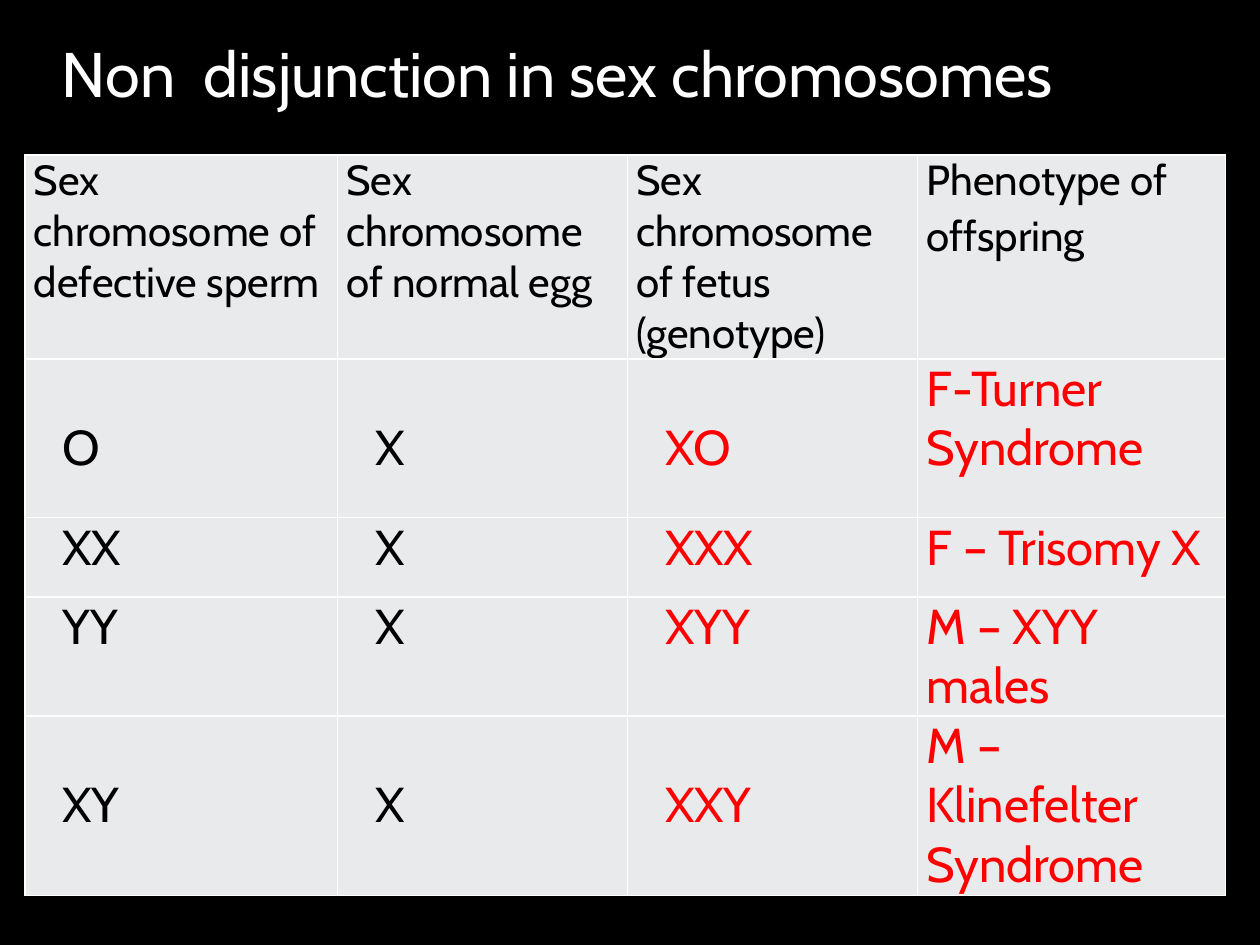
import pptx
import pptx.dml.color
import pptx.enum.text
import pptx.oxml.ns
import pptx.util
from lxml import etree

Cm = pptx.util.Cm
Pt = pptx.util.Pt
COLORS = {"back": "000000", "title": "FFFFFF", "text": "000000",
          "result": "FF0000", "cell": "E9EAEC", "line": "FFFFFF"}
FONT = "Cabin"
WIDTHS = [6.3, 5.85, 5.85, 6.2]
HEIGHTS = [4.11, 3.2, 1.6, 2.4, 3.61]
LINE = 1.2  # height of one line of body text

HEAD = ["Sex chromosome of\ndefective sperm", "Sex chromosome of normal egg",
        "Sex chromosome of fetus (genotype)", "Phenotype of\noffspring"]
# Sperm, egg, fetus, offspring, and lines the symbols are moved down
CASES = [
    (["O", "X", "XO", "F-Turner Syndrome"], 1),
    (["XX", "X", "XXX", "F – Trisomy X"], 0),
    (["YY", "X", "XYY", "M – XYY males"], 0),
    (["XY", "X", "XXY", "M – Klinefelter Syndrome"], 1),
]


def rgb(name):
    return pptx.dml.color.RGBColor.from_string(COLORS[name])


def style(frame, size, color):
    for par in frame.paragraphs:
        for run in par.runs:
            run.font.name = FONT
            run.font.size = Pt(size)
            run.font.color.rgb = rgb(color)


def border(cell):
    props = cell._tc.get_or_add_tcPr()
    qn = pptx.oxml.ns.qn
    for i, side in enumerate(("lnL", "lnR", "lnT", "lnB")):
        line = etree.Element(qn("a:" + side), w=str(Pt(1)))
        fill = etree.SubElement(line, qn("a:solidFill"))
        etree.SubElement(fill, qn("a:srgbClr"), val=COLORS["line"])
        props.insert(i, line)


def put(cell, text, size, color, drop=0):
    cell.fill.solid()
    cell.fill.fore_color.rgb = rgb("cell")
    cell.margin_left = cell.margin_right = Cm(0.18)
    cell.margin_top = Cm(drop * LINE)
    cell.margin_bottom = 0
    cell.text_frame.text = text
    style(cell.text_frame, size, color)
    border(cell)


def add_title(slide, left, top, width, height):
    box = slide.shapes.add_textbox(Cm(left), Cm(top), Cm(width), Cm(height))
    frame = box.text_frame
    frame.word_wrap = True
    frame.vertical_anchor = pptx.enum.text.MSO_ANCHOR.BOTTOM
    frame.text = "Non  disjunction in sex chromosomes"
    style(frame, 36, "title")


def add_grid(slide, left, top):
    table = slide.shapes.add_table(
        len(HEIGHTS), len(WIDTHS), Cm(left), Cm(top),
        Cm(sum(WIDTHS)), Cm(sum(HEIGHTS))).table
    table.horz_banding = False
    table.first_row = False
    for col, width in zip(table.columns, WIDTHS):
        col.width = Cm(width)
    for row, height in zip(table.rows, HEIGHTS):
        row.height = Cm(height)

    # Header row
    for c, text in enumerate(HEAD):
        put(table.cell(0, c), text, 24, "text")
    table.cell(0, 3).text_frame.paragraphs[0].space_after = Pt(3)

    # One row for each case; the symbols are indented
    for r, (texts, drop) in enumerate(CASES, 1):
        for c, text in enumerate(texts):
            cell = table.cell(r, c)
            symbol = c < 3
            put(cell, text, 28, "text" if c < 2 else "result",
                drop if symbol else 0)
            if symbol:
                props = cell.text_frame.paragraphs[0]._p.get_or_add_pPr()
                props.set("marL", str(Cm(1.32)))
                props.set("indent", str(Cm(-0.74)))


def main():
    deck = pptx.Presentation()
    deck.slide_width = Cm(25.4)
    deck.slide_height = Cm(19.05)
    slide = deck.slides.add_slide(deck.slide_layouts[6])
    slide.background.fill.solid()
    slide.background.fill.fore_color.rgb = rgb("back")
    add_grid(slide, 0.5, 3.12)
    add_title(slide, 1, 0.64, 21.34, 1.7)
    deck.save("out.pptx")


if __name__ == "__main__":
    main()
